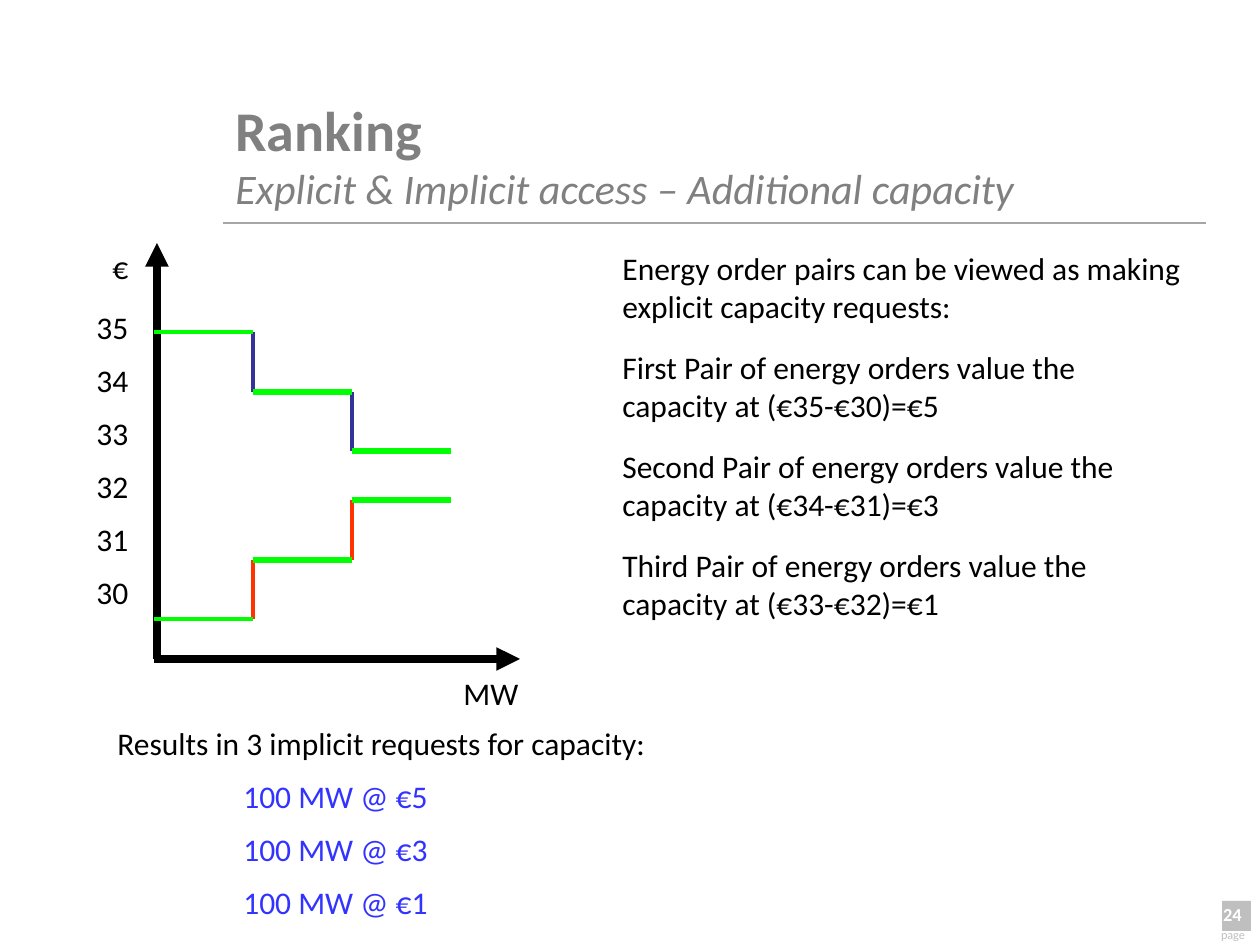
from dataclasses import dataclass, field

from lxml.etree import SubElement
from pptx import Presentation
from pptx.dml.color import RGBColor
from pptx.enum.shapes import MSO_CONNECTOR, MSO_SHAPE
from pptx.enum.text import MSO_ANCHOR as Anchor, PP_ALIGN as Align
from pptx.oxml.ns import qn
from pptx.util import Emu, Pt

PX_PER_INCH = 126
BLACK, GREY, GREEN = "000000", "808080", "00FF00"
PARAGRAPH_GAP = 8.7


@dataclass
class Line:
    start: tuple[int, int]
    end: tuple[int, int]
    color: str
    width: float
    arrow: bool = False


@dataclass
class Text:
    content: str
    color: str = BLACK
    size: float = 18
    indent: int = 0
    format: dict = field(default_factory=dict)


@dataclass
class Box:
    left: int
    top: int
    width: int
    height: int
    texts: list[Text]
    frame: dict = field(default_factory=dict)
    align: Align = Align.LEFT


@dataclass
class Curve:
    color: str
    levels: list[int]


def px(value: int) -> Emu:
    return Emu(round(value * 914400 / PX_PER_INCH))


def rgb(color: str) -> RGBColor:
    return RGBColor.from_string(color)


def set_all(target, values: dict) -> None:
    for name, value in values.items():
        setattr(target, name, value)


def draw_line(slide, line: Line) -> None:
    ends = [px(value) for value in (*line.start, *line.end)]
    connector = slide.shapes.add_connector(MSO_CONNECTOR.STRAIGHT, *ends)
    connector.line.color.rgb = rgb(line.color)
    connector.line.width = Pt(line.width)
    if line.arrow:
        SubElement(connector.line._get_or_add_ln(), qn("a:tailEnd"), type="triangle")
    SubElement(connector._element.spPr, qn("a:effectLst"))


def draw_box(slide, box: Box) -> None:
    bounds = [px(value) for value in (box.left, box.top, box.width, box.height)]
    frame = slide.shapes.add_textbox(*bounds).text_frame
    set_all(frame, {"word_wrap": True, **box.frame})
    for index, text in enumerate(box.texts):
        paragraph = frame.paragraphs[0]
        if index:
            paragraph = frame.add_paragraph()
            paragraph.space_before = Pt(PARAGRAPH_GAP)
        paragraph.alignment = box.align
        if text.indent:
            paragraph._p.get_or_add_pPr().set("marL", str(px(text.indent)))
        add_run(paragraph, text)


def add_run(paragraph, text: Text) -> None:
    run = paragraph.add_run()
    run.text = text.content
    set_all(run.font, {"name": "Calibri", "size": Pt(text.size), **text.format})
    run.font.color.rgb = rgb(text.color)


def draw_title(slide) -> None:
    frame = slide.shapes.add_textbox(px(223), px(76), px(1037), px(157)).text_frame
    set_all(frame, {"word_wrap": True, "vertical_anchor": Anchor.MIDDLE})
    paragraph = frame.paragraphs[0]
    add_run(paragraph, Text("Ranking", GREY, 32, format={"bold": True}))
    paragraph.add_line_break()
    add_run(paragraph, Text("Explicit & Implicit access – Additional capacity",
                            GREY, 24, format={"italic": True}))


def draw_page_number(slide) -> None:
    square = slide.shapes.add_shape(MSO_SHAPE.RECTANGLE, px(1222), px(901), px(29), px(30))
    square.shadow.inherit = False
    square.fill.solid()
    square.fill.fore_color.rgb = rgb("BFBFBF")
    square.line.fill.background()
    draw_box(slide, Box(1197, 897, 57, 34,
                        [Text("24", "FFFFFF", 10.5, format={"bold": True})],
                        {"word_wrap": False}, Align.RIGHT))
    margins = dict.fromkeys(
        ("margin_left", "margin_top", "margin_right", "margin_bottom"), 0)
    draw_box(slide, Box(1221, 932, 32, 6, [Text("page", "BFBFBF", 7)],
                        {"vertical_anchor": Anchor.MIDDLE, **margins}, Align.JUSTIFY))


def draw_chart(slide) -> None:
    left, step = 154, 99
    curves = [Curve("FF3300", [619, 560, 500]), Curve("333399", [332, 392, 451])]

    # Axes
    draw_line(slide, Line((left, 659), (520, 659), BLACK, 4.5, arrow=True))
    draw_line(slide, Line((157, 659), (157, 243), BLACK, 4.5, arrow=True))

    # Stepped order curves
    for curve in curves:
        for index, level in enumerate(curve.levels):
            start = left + index * step
            draw_line(slide, Line((start, level), (start + step, level), curve.color, 2.25))
            if index:
                previous = curve.levels[index - 1]
                draw_line(slide, Line((start, previous), (start, level), curve.color, 2.25))

    # Matched pairs of orders
    for index, pair in enumerate(zip(*(curve.levels for curve in curves))):
        start = left + index * step
        for level in pair:
            draw_line(slide, Line((start, level), (start + step, level),
                                  GREEN, 3 if index else 2.25))

    # Axis labels
    draw_box(slide, Box(84, 302, 69, 335, [Text(str(price)) for price in range(35, 29, -1)]))
    draw_box(slide, Box(100, 242, 59, 50, [Text("€")]))
    draw_box(slide, Box(451, 668, 110, 50, [Text("MW")]))


def draw_explanations(slide) -> None:
    draw_box(slide, Box(610, 243, 596, 88, [
        Text("Energy order pairs can be viewed as making explicit capacity requests:")]))
    pairs = [("First", 35, 30), ("Second", 34, 31), ("Third", 33, 32)]
    for index, (name, buy, sell) in enumerate(pairs):
        sentence = (f"{name} Pair of energy orders value the capacity at "
                    f"(€{buy}-€{sell})=€{buy - sell}")
        draw_box(slide, Box(610, 342 + 99 * index, 517, 88, [Text(sentence)]))
    requests = [Text(f"100 MW @ €{buy - sell}", "3333FF", indent=PX_PER_INCH)
                for _, buy, sell in pairs]
    draw_box(slide, Box(105, 718, 645, 222, [
        Text("Results in 3 implicit requests for capacity:"), *requests]))


def main() -> None:
    presentation = Presentation()
    set_all(presentation, {"slide_width": px(1260), "slide_height": px(945)})
    slide = presentation.slides.add_slide(presentation.slide_layouts[6])
    draw_line(slide, Line((223, 223), (1206, 223), "A6A6A6", 0.75))
    draw_page_number(slide)
    draw_title(slide)
    draw_chart(slide)
    draw_explanations(slide)
    presentation.save("out.pptx")


if __name__ == "__main__":
    main()
